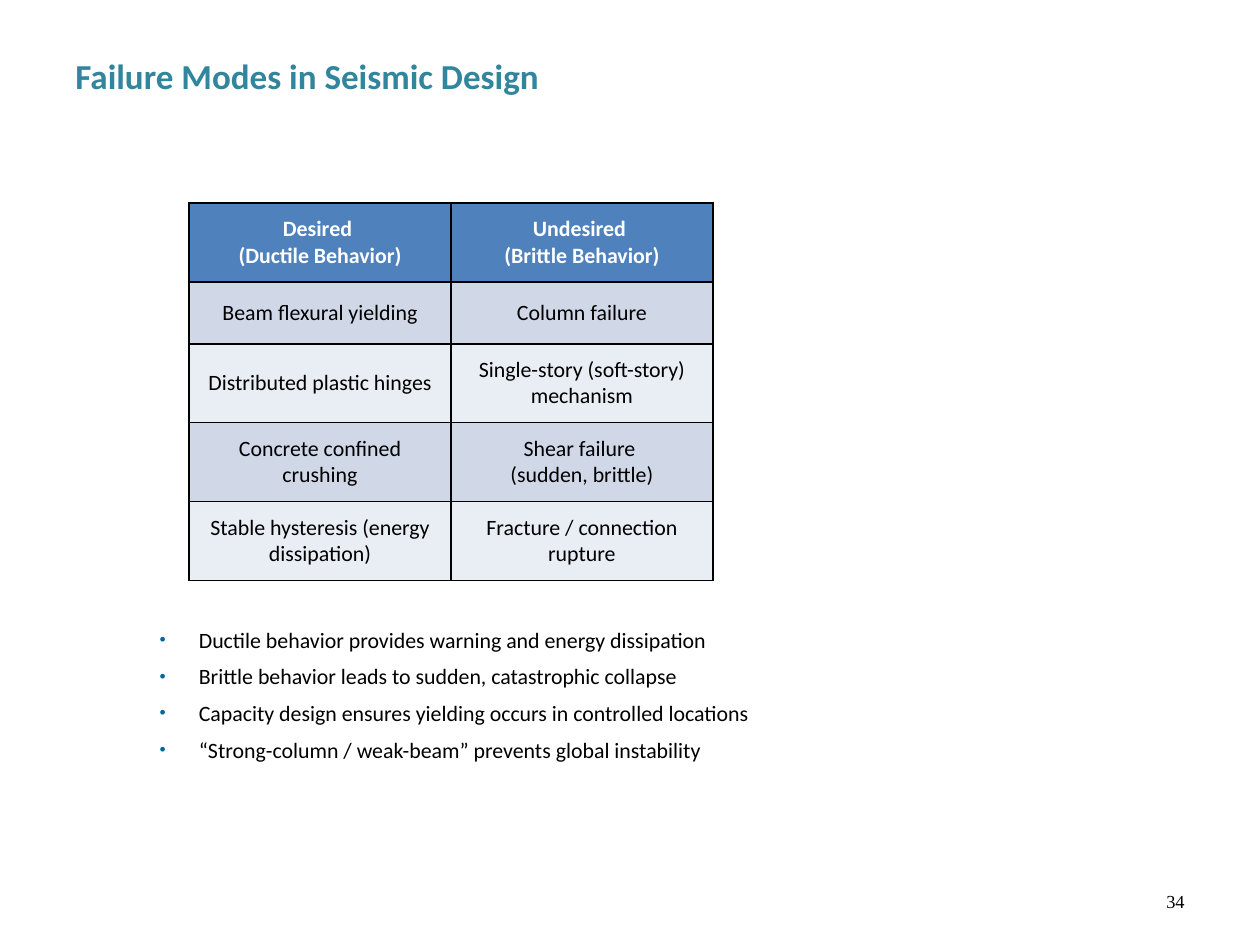
from dataclasses import dataclass
from typing import Any

from lxml.etree import SubElement as add_element
from pptx import Presentation
from pptx.dml.color import RGBColor
from pptx.enum.text import MSO_ANCHOR as Anchor, PP_ALIGN as Align
from pptx.oxml.ns import qn
from pptx.util import Cm, Pt

COLORS = {
    "title": "31859C",
    "text": "000000",
    "number": "010000",
    "bullet": "006699",
    "border": "000000",
    "header": "4F81BD",
    "header_text": "FFFFFF",
    "band_dark": "D0D8E8",
    "band_light": "E9EDF4",
}

MODES = [
    ("Desired \n(Ductile Behavior)", "Undesired \n(Brittle Behavior)"),
    ("Beam flexural yielding", "Column failure"),
    ("Distributed plastic hinges", "Single-story (soft-story) mechanism"),
    ("Concrete confined crushing", "Shear failure \n(sudden, brittle)"),
    ("Stable hysteresis (energy dissipation)", "Fracture / connection rupture"),
]

LESSONS = [
    "Ductile behavior provides warning and energy dissipation",
    "Brittle behavior leads to sudden, catastrophic collapse",
    "Capacity design ensures yielding occurs in controlled locations",
    "“Strong-column / weak-beam” prevents global instability",
]


def rgb(name):
    return RGBColor.from_string(COLORS[name])


@dataclass
class SlideBuilder:
    page: Any
    font: str = "Calibri"
    body_size: float = 12.5

    def add_text(self, para, text, color="text", size=None, bold=False, font=None):
        for index, line in enumerate(text.split("\n")):
            if index:
                para.add_line_break()
            span = para.add_run()
            span.text = line
            span.font.name = font or self.font
            span.font.size = Pt(size or self.body_size)
            span.font.bold = bold
            span.font.color.rgb = rgb(color)

    def frame(self, left, top, width, height, anchor=Anchor.TOP):
        box = self.page.shapes.add_textbox(Cm(left), Cm(top), Cm(width), Cm(height))
        box.text_frame.word_wrap = True
        box.text_frame.vertical_anchor = anchor
        return box.text_frame

    def title(self, text, *place):
        para = self.frame(*place).paragraphs[0]
        self.add_text(para, text, "title", 20, True)

    def number(self, text, *place):
        para = self.frame(*place, anchor=Anchor.MIDDLE).paragraphs[0]
        para.alignment = Align.RIGHT
        self.add_text(para, text, "number", 10.5, font="Times New Roman")

    def bullets(self, lines, *place):
        frame = self.frame(*place)
        for index, line in enumerate(lines):
            para = frame.add_paragraph() if index else frame.paragraphs[0]
            self.mark(para)
            para.space_before = Pt(3 if index else 0)
            para.space_after = Pt(3)
            self.add_text(para, line)

    def mark(self, para):
        props = para._p.get_or_add_pPr()
        props.set("marL", str(Cm(0.79)))
        props.set("indent", str(-Cm(0.79)))
        color = add_element(props, qn("a:buClr"))
        add_element(color, qn("a:srgbClr"), val=COLORS["bullet"])
        add_element(props, qn("a:buSzPct"), val="80000")
        add_element(props, qn("a:buFont"), typeface="Arial")
        add_element(props, qn("a:buChar"), char="•")

    def border(self, cell):
        props = cell._tc.get_or_add_tcPr()
        for side in ("lnL", "lnR", "lnT", "lnB"):
            line = add_element(props, qn(f"a:{side}"), w=str(Pt(1)))
            fill = add_element(line, qn("a:solidFill"))
            add_element(fill, qn("a:srgbClr"), val=COLORS["border"])

    def table(self, rows, left, top, column_width, heights):
        columns = len(rows[0])
        table = self.page.shapes.add_table(
            len(rows), columns, Cm(left), Cm(top),
            Cm(column_width * columns), Cm(sum(heights)),
        ).table
        for column in table.columns:
            column.width = Cm(column_width)
        for index, (texts, height) in enumerate(zip(rows, heights)):
            table.rows[index].height = Cm(height)
            band = "band_dark" if index % 2 else "band_light"
            for position, text in enumerate(texts):
                cell = table.cell(index, position)
                self.border(cell)
                cell.fill.solid()
                cell.fill.fore_color.rgb = rgb(band if index else "header")
                cell.vertical_anchor = Anchor.MIDDLE
                para = cell.text_frame.paragraphs[0]
                para.alignment = Align.CENTER
                self.add_text(para, text, "text" if index else "header_text", bold=not index)


def main():
    deck = Presentation()
    deck.slide_width, deck.slide_height = Cm(25.4), Cm(19.05)
    builder = SlideBuilder(deck.slides.add_slide(deck.slide_layouts[6]))
    builder.number("34", 18.2, 17.65, 5.93, 1.02)
    builder.title("Failure Modes in Seismic Design", 1.27, 0.97, 13.54, 1.12)
    builder.table(MODES, 3.81, 4.09, 5.28, [1.59, 1.25, 1.59, 1.59, 1.59])
    builder.bullets(LESSONS, 2.97, 12.5, 15.24, 3.02)
    deck.save("out.pptx")


if __name__ == "__main__":
    main()
